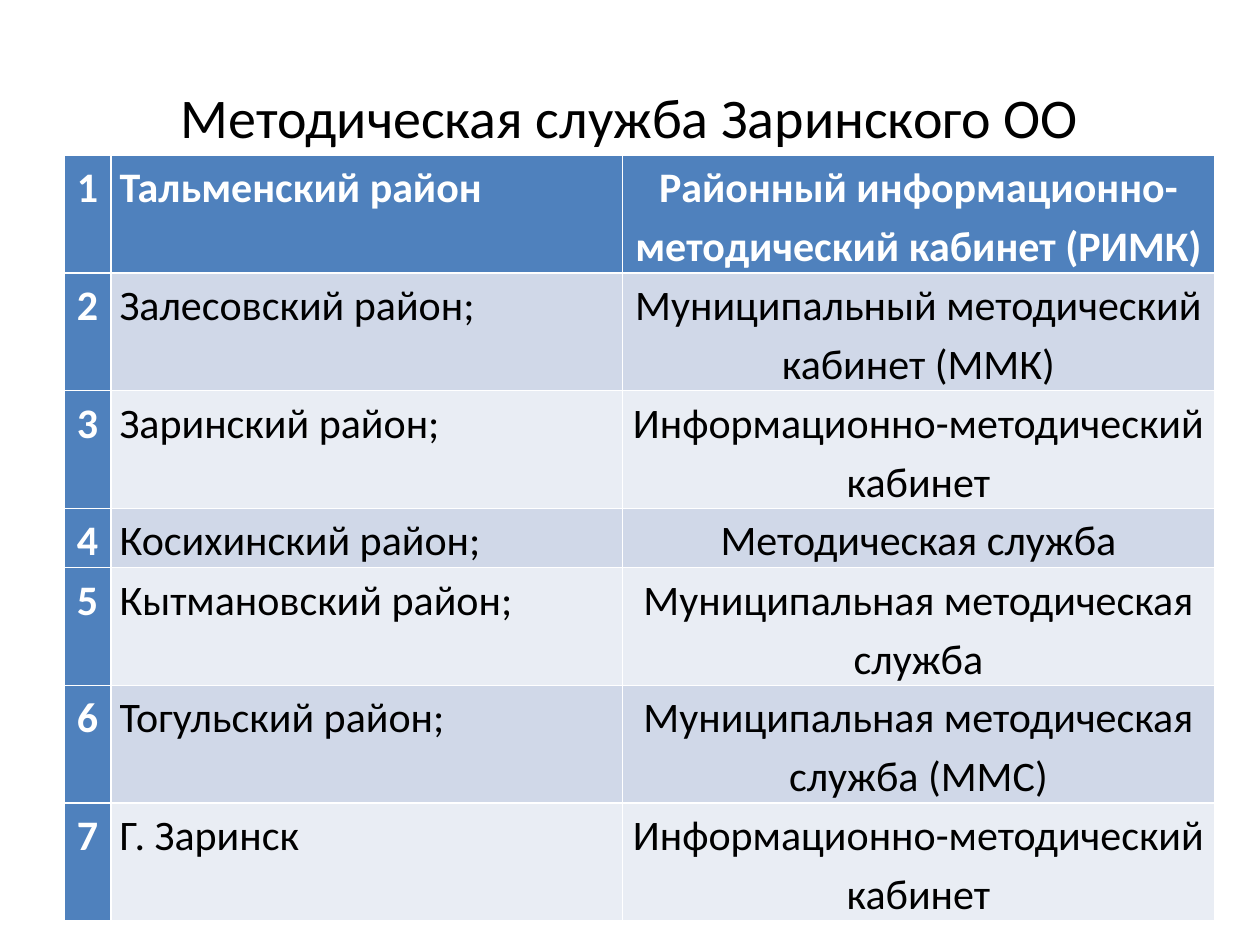
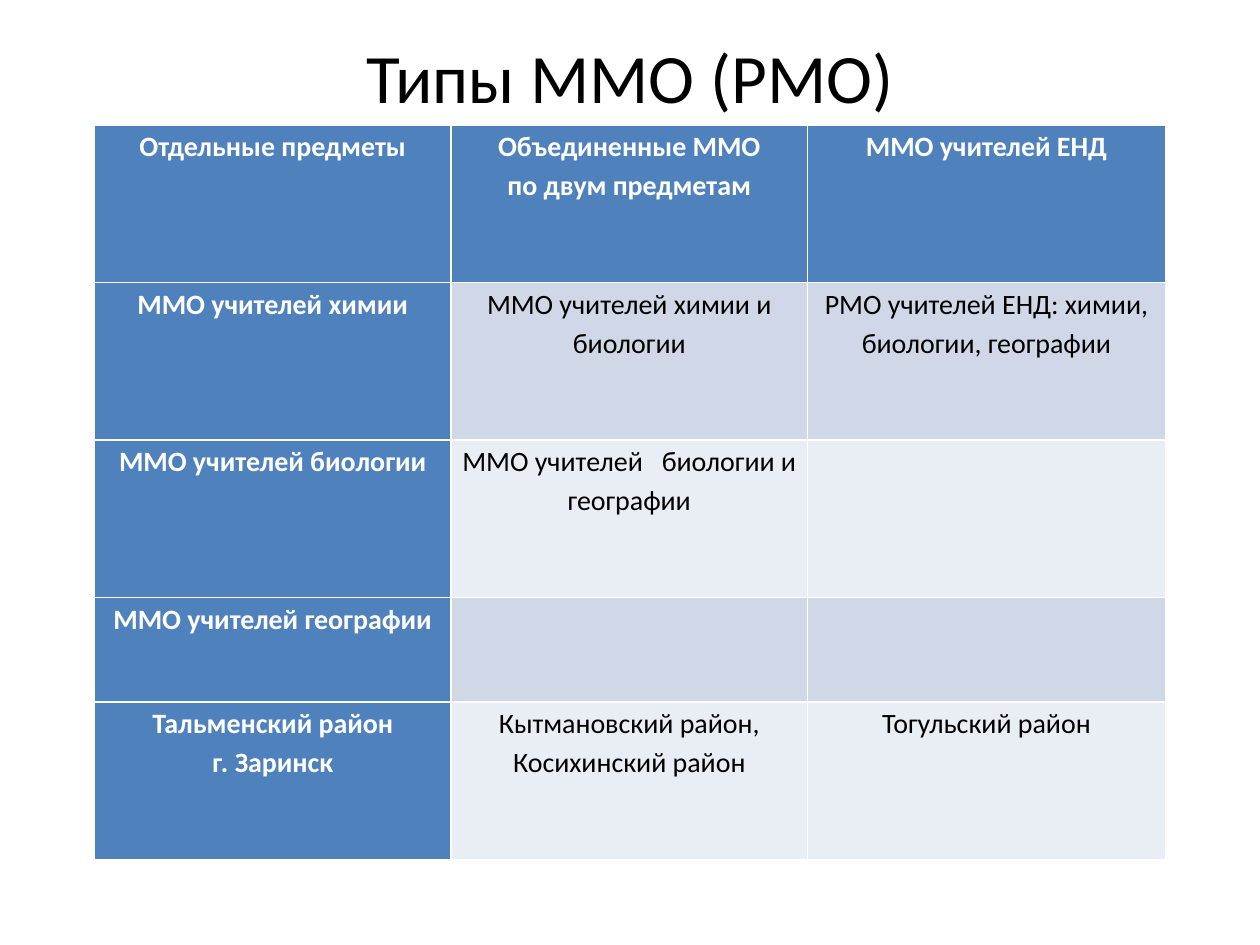
import pptx
import pptx.util
import pptx.dml.color
import pptx.enum.text

Inches = pptx.util.Inches
Pt = pptx.util.Pt
ALIGN = pptx.enum.text.PP_ALIGN
ANCHOR = pptx.enum.text.MSO_ANCHOR

FONT = "Calibri"
BLACK = "000000"
WHITE = "FFFFFF"
HEAD_FILL = "4F81BD"
BAND_FILLS = ("D0D8E8", "E9EDF4")
TITLE_LAYOUT = 5

DISTRICT_SERVICES = [
    ("1", "Тальменский район", "Районный информационно-методический кабинет (РИМК)"),
    ("2", "Залесовский район;", "Муниципальный методический кабинет (ММК)"),
    ("3", "Заринский район;", "Информационно-методический кабинет"),
    ("4", "Косихинский район;", "Методическая служба"),
    ("5", "Кытмановский район;", "Муниципальная методическая служба"),
    ("6", "Тогульский район;", "Муниципальная методическая служба (ММС)"),
    ("7", "Г. Заринск", "Информационно-методический кабинет"),
]

ASSOCIATION_TYPES = [
    ("Отдельные предметы", "Объединенные ММО\nпо двум предметам", "ММО учителей ЕНД"),
    ("ММО учителей химии", "ММО учителей химии и биологии",
     "РМО учителей ЕНД: химии, биологии, географии"),
    ("ММО учителей биологии", "ММО учителей   биологии и географии", ""),
    ("ММО учителей географии", "", ""),
    ("Тальменский район\nг. Заринск", "Кытмановский район, Косихинский район",
     "Тогульский район"),
]

PAGES = [
    {
        "title": "Методическая служба Заринского ОО",
        "title_size": 32,
        "title_bottom": 0.05,
        "rows": DISTRICT_SERVICES,
        "corner": (0.51, 1.23),
        "widths": (0.37, 4.06, 4.7),
        "heights": (0.93, 0.93, 0.93, 0.47, 0.93, 0.93, 0.93),
        "aligns": (ALIGN.CENTER, ALIGN.LEFT, ALIGN.CENTER),
        "size": 24,
    },
    {
        "title": "Типы ММО (РМО)",
        "title_size": 39.6,
        "title_bottom": 0.7,
        "rows": ASSOCIATION_TYPES,
        "corner": (0.75, 0.99),
        "widths": (2.83, 2.83, 2.84),
        "heights": (1.25, 1.25, 1.25, 0.83, 1.25),
        "aligns": (ALIGN.CENTER,) * 3,
        "size": 16,
    },
]


def color(value):
    return pptx.dml.color.RGBColor.from_string(value)


def add_span(para, text, size, ink, bold=False):
    span = para.add_run()
    span.text = text
    span.font.name = FONT
    span.font.size = Pt(size)
    span.font.bold = bold
    span.font.color.rgb = color(ink)


def set_title(page, content):
    title = page.shapes.title
    title.left, title.top = Inches(0.5), Inches(0.3)
    title.width, title.height = Inches(9), Inches(1.25)
    frame = title.text_frame
    frame.vertical_anchor = ANCHOR.MIDDLE
    frame.margin_bottom = Inches(content["title_bottom"])
    para = frame.paragraphs[0]
    para.alignment = ALIGN.CENTER
    add_span(para, content["title"], content["title_size"], BLACK)


def fill_cell(cell, text, align, size, fill, is_head):
    cell.fill.solid()
    cell.fill.fore_color.rgb = color(fill)
    cell.margin_left = cell.margin_right = Inches(0.07)
    cell.margin_top = cell.margin_bottom = 0
    if not text:
        return
    frame = cell.text_frame
    for index, line in enumerate(text.split("\n")):
        para = frame.add_paragraph() if index else frame.paragraphs[0]
        para.alignment = align
        para.line_spacing = 1.15
        add_span(para, line, size, WHITE if is_head else BLACK, is_head)


def add_grid(page, content):
    rows, widths, heights = content["rows"], content["widths"], content["heights"]
    left, top = content["corner"]
    grid = page.shapes.add_table(
        len(rows), len(widths), Inches(left), Inches(top),
        Inches(sum(widths)), Inches(sum(heights))).table
    grid.first_col = True
    for column, width in zip(grid.columns, widths):
        column.width = Inches(width)
    for row, height in zip(grid.rows, heights):
        row.height = Inches(height)
    for r, texts in enumerate(rows):
        for c, text in enumerate(texts):
            is_head = r == 0 or c == 0
            fill = HEAD_FILL if is_head else BAND_FILLS[(r - 1) % 2]
            fill_cell(grid.cell(r, c), text, content["aligns"][c],
                      content["size"], fill, is_head)


def main():
    deck = pptx.Presentation()
    deck.slide_width, deck.slide_height = Inches(10), Inches(7.5)
    for content in PAGES:
        page = deck.slides.add_slide(deck.slide_layouts[TITLE_LAYOUT])
        set_title(page, content)
        add_grid(page, content)
    deck.save("out.pptx")


if __name__ == "__main__":
    main()
